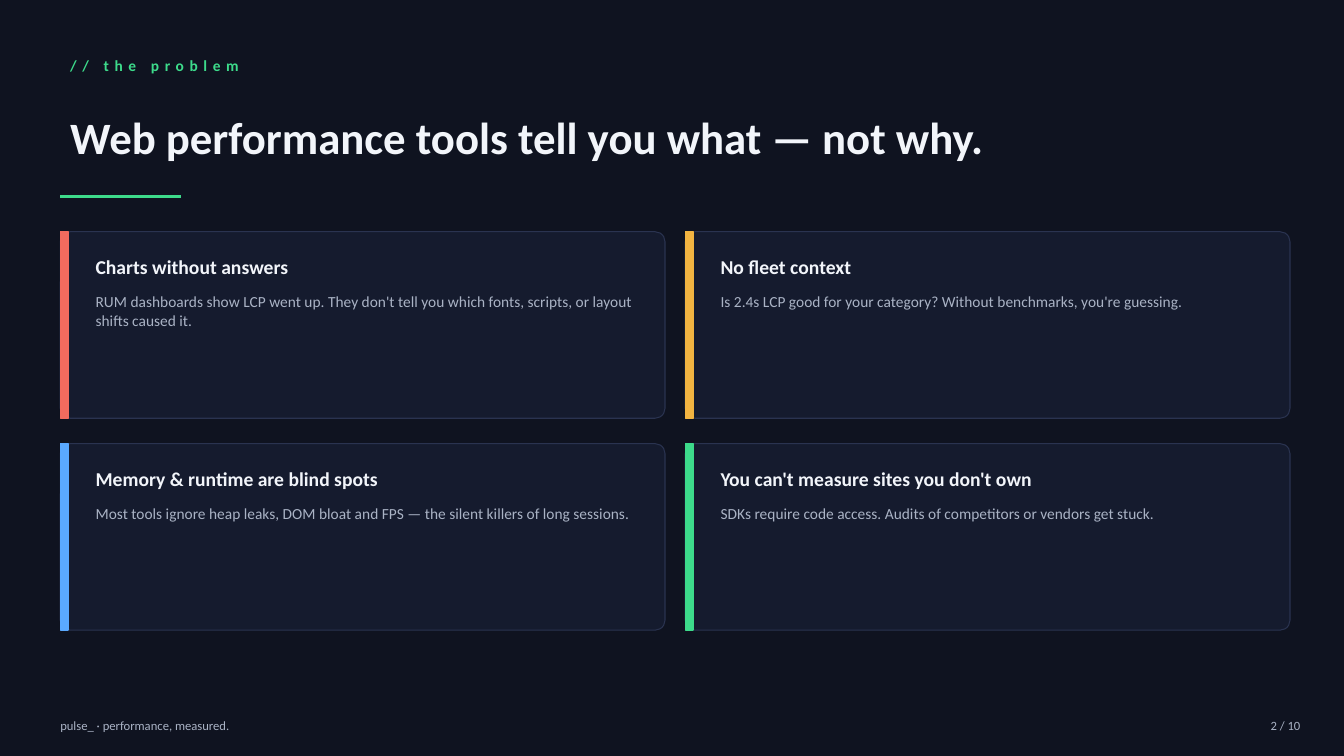
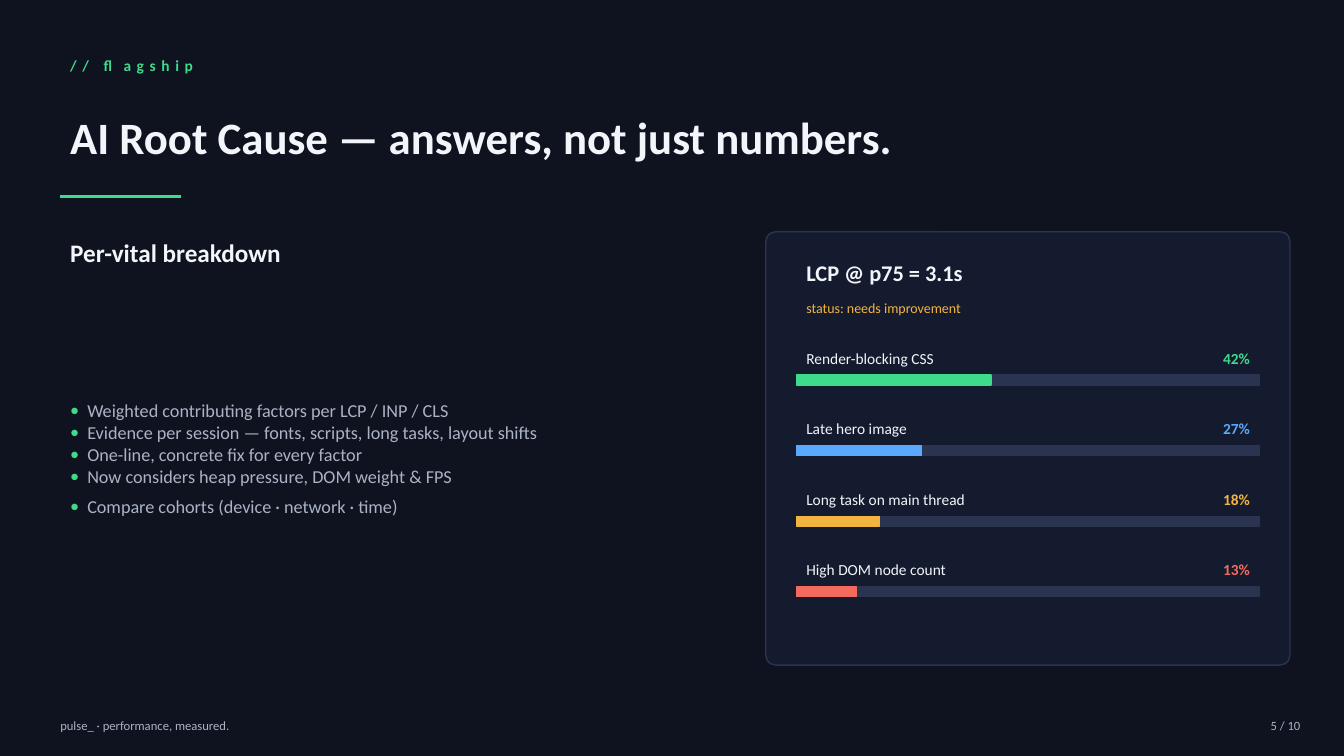
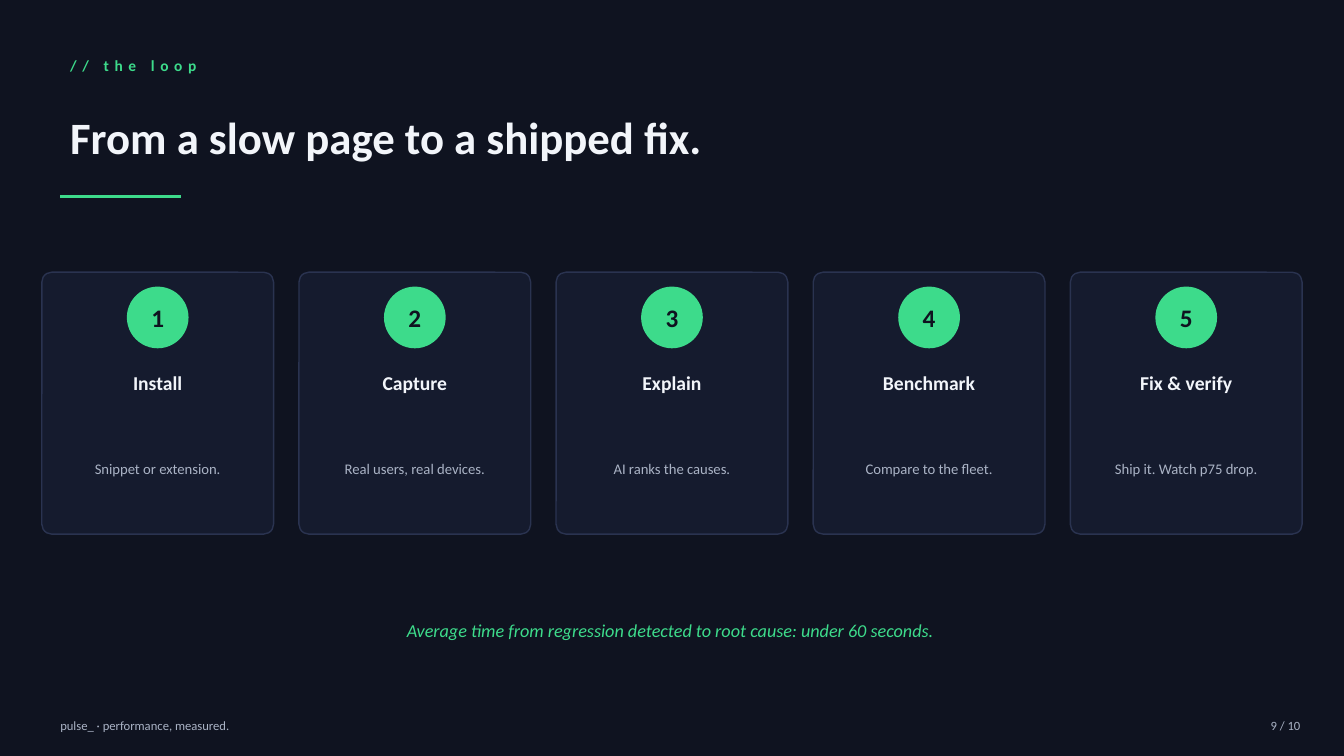
from lxml import etree
from pptx import Presentation
from pptx.dml.color import RGBColor
from pptx.enum.shapes import MSO_CONNECTOR, MSO_SHAPE
from pptx.enum.text import MSO_ANCHOR, PP_ALIGN
from pptx.oxml.ns import qn
from pptx.util import Cm, Pt

# Shared look
FONT = "Calibri"
NIGHT, PANEL, EDGE = "0F1320", "151B2E", "2A3350"
WHITE, GREY = "F2F5FA", "AAB3C5"
GREEN, RED, AMBER, BLUE = "3DDB8B", "F26B5E", "F2B441", "5AA9FF"
SLIDE_W, SLIDE_H = 33.87, 19.05
LEFT = 1.52
CONTENT_TOP = 5.84
RADIUS = 0.25
FOOTER = "pulse_ · performance, measured."
PAGE_COUNT = 10

# Content
PROBLEM = {
    "page": 2,
    "kicker": "// the problem",
    "title": "Web performance tools tell you what — not why.",
    "cards": [
        ("Charts without answers",
         "RUM dashboards show LCP went up. They don't tell you which fonts, "
         "scripts, or layout shifts caused it.", RED),
        ("No fleet context",
         "Is 2.4s LCP good for your category? Without benchmarks, you're guessing.", AMBER),
        ("Memory & runtime are blind spots",
         "Most tools ignore heap leaks, DOM bloat and FPS — the silent killers "
         "of long sessions.", BLUE),
        ("You can't measure sites you don't own",
         "SDKs require code access. Audits of competitors or vendors get stuck.", GREEN),
    ],
}
FLAGSHIP = {
    "page": 5,
    "kicker": "// flagship",
    "title": "AI Root Cause — answers, not just numbers.",
    "subtitle": "Per-vital breakdown",
    "points": [
        "Weighted contributing factors per LCP / INP / CLS",
        "Evidence per session — fonts, scripts, long tasks, layout shifts",
        "One-line, concrete fix for every factor",
        "Now considers heap pressure, DOM weight & FPS",
        "Compare cohorts (device · network · time)",
    ],
    "metric": "LCP @ p75 = 3.1s",
    "status": "status: needs improvement",
    "factors": [
        ("Render-blocking CSS", 42, GREEN),
        ("Late hero image", 27, BLUE),
        ("Long task on main thread", 18, AMBER),
        ("High DOM node count", 13, RED),
    ],
}
LOOP = {
    "page": 9,
    "kicker": "// the loop",
    "title": "From a slow page to a shipped fix.",
    "steps": [
        ("Install", "Snippet or extension."),
        ("Capture", "Real users, real devices."),
        ("Explain", "AI ranks the causes."),
        ("Benchmark", "Compare to the fleet."),
        ("Fix & verify", "Ship it. Watch p75 drop."),
    ],
    "summary": "Average time from regression detected to root cause: under 60 seconds.",
}


def rgb(color):
    return RGBColor.from_string(color)


def style(paragraph, size, color, bold=False, italic=False, align=PP_ALIGN.LEFT):
    paragraph.alignment = align
    font = paragraph.font
    font.name, font.size, font.bold, font.italic = FONT, Pt(size), bold, italic
    font.color.rgb = rgb(color)


def add_text(slide, box, text, size, color, anchor=MSO_ANCHOR.MIDDLE, **look):
    """Write one paragraph in a wrapping text box and return its frame."""
    frame = slide.shapes.add_textbox(*map(Cm, box)).text_frame
    frame.word_wrap = True
    frame.vertical_anchor = anchor
    frame.text = text
    style(frame.paragraphs[0], size, color, **look)
    return frame


def add_block(slide, kind, box, fill, line=None, width=1):
    block = slide.shapes.add_shape(kind, *map(Cm, box))
    block.shadow.inherit = False
    block.fill.solid()
    block.fill.fore_color.rgb = rgb(fill)
    block.line.color.rgb = rgb(line or fill)
    block.line.width = Pt(width)
    return block


def add_panel(slide, box, width=1):
    panel = add_block(slide, MSO_SHAPE.ROUNDED_RECTANGLE, box, PANEL, EDGE, width)
    panel.adjustments[0] = RADIUS / min(box[2:])


def add_bullet(paragraph):
    hang = Cm(0.43)
    props = paragraph._p.get_or_add_pPr()
    props.set("marL", str(hang))
    props.set("indent", str(-hang))
    color = etree.SubElement(props, qn("a:buClr"))
    etree.SubElement(color, qn("a:srgbClr"), val=GREEN)
    etree.SubElement(props, qn("a:buFont"), typeface=FONT)
    etree.SubElement(props, qn("a:buChar"), char="•")


def start_slide(prs, content):
    """Add a slide with the shared kicker, title, rule and footer."""
    slide = prs.slides.add_slide(prs.slide_layouts[6])
    kicker = add_text(slide, (LEFT, 1.27, 20.32, 0.76), content["kicker"], 11, GREEN, bold=True)
    kicker.paragraphs[0].runs[0]._r.get_or_add_rPr().set("spc", "400")
    add_text(slide, (LEFT, 2.16, 30.48, 2.54), content["title"], 32, WHITE, bold=True)
    rule = slide.shapes.add_connector(
        MSO_CONNECTOR.STRAIGHT, Cm(LEFT), Cm(4.95), Cm(LEFT + 3.05), Cm(4.95))
    rule.line.color.rgb = rgb(GREEN)
    rule.line.width = Pt(2)
    etree.SubElement(rule._element.spPr, qn("a:effectLst"))
    add_text(slide, (1.27, 17.91, 15.24, 0.76), FOOTER, 9, GREY)
    add_text(slide, (30.48, 17.91, 2.54, 0.76), f"{content['page']} / {PAGE_COUNT}", 9, GREY,
             align=PP_ALIGN.RIGHT)
    return slide


def build_problem(prs):
    slide = start_slide(prs, PROBLEM)
    card_w, card_h, gap_x, gap_y = 15.24, 4.7, 0.51, 0.64
    for i, (heading, body, accent) in enumerate(PROBLEM["cards"]):
        row, col = divmod(i, 2)
        x = LEFT + col * (card_w + gap_x)
        y = CONTENT_TOP + row * (card_h + gap_y)
        add_panel(slide, (x, y, card_w, card_h), 0.75)
        add_block(slide, MSO_SHAPE.RECTANGLE, (x, y, 0.2, card_h), accent)
        add_text(slide, (x + 0.64, y + 0.38, 14.22, 1.02), heading, 14, WHITE, bold=True)
        add_text(slide, (x + 0.64, y + 1.4, 14.22, 3.05), body, 11, GREY, MSO_ANCHOR.TOP)


def build_flagship(prs):
    slide = start_slide(prs, FLAGSHIP)

    # Bulleted breakdown
    add_text(slide, (LEFT, CONTENT_TOP, 16.51, 1.02), FLAGSHIP["subtitle"], 18, WHITE, bold=True)
    points = add_text(slide, (LEFT, 7.11, 16.51, 8.89), "\n".join(FLAGSHIP["points"]), 13, GREY)
    for paragraph in points.paragraphs:
        add_bullet(paragraph)
        style(paragraph, 13, GREY)
    points.paragraphs[-1].space_before = Pt(6.3)

    # Factor panel
    add_panel(slide, (19.3, CONTENT_TOP, 13.21, 10.92))
    x, w = 20.07, 11.68
    add_text(slide, (x, 6.35, w, 1.02), FLAGSHIP["metric"], 16, WHITE, bold=True)
    add_text(slide, (x, 7.37, w, 0.76), FLAGSHIP["status"], 10, AMBER)
    percent_w = 1.52
    for i, (factor, percent, color) in enumerate(FLAGSHIP["factors"]):
        y = 8.64 + i * 1.78
        add_text(slide, (x, y, 7.87, 0.76), factor, 11, WHITE)
        add_text(slide, (x + w - percent_w, y, percent_w, 0.76), f"{percent}%", 11, color,
                 bold=True, align=PP_ALIGN.RIGHT)
        for bar_w, fill in ((w, EDGE), (w * percent / 100, color)):
            add_block(slide, MSO_SHAPE.RECTANGLE, (x, y + 0.81, bar_w, 0.25), fill)


def build_loop(prs):
    slide = start_slide(prs, LOOP)
    steps = LOOP["steps"]
    card_w, gap, top, badge_w, inset = 5.84, 0.64, 6.86, 1.52, 0.38
    first_x = (SLIDE_W - len(steps) * card_w - (len(steps) - 1) * gap) / 2
    for i, (heading, body) in enumerate(steps):
        x = first_x + i * (card_w + gap)
        add_panel(slide, (x, top, card_w, 6.6))
        badge = add_block(slide, MSO_SHAPE.OVAL,
                          (x + (card_w - badge_w) / 2, top + 0.38, badge_w, badge_w), GREEN)
        number = badge.text_frame
        number.text = str(i + 1)
        number.vertical_anchor = MSO_ANCHOR.MIDDLE
        style(number.paragraphs[0], 18, NIGHT, bold=True, align=PP_ALIGN.CENTER)
        add_text(slide, (x, top + 2.28, card_w, 1.02), heading, 14, WHITE, bold=True,
                 align=PP_ALIGN.CENTER)
        add_text(slide, (x + inset, top + 3.43, card_w - 2 * inset, 3.05), body, 10.5, GREY,
                 align=PP_ALIGN.CENTER)
    add_text(slide, (LEFT, 15.24, 30.73, 1.27), LOOP["summary"], 13, GREEN, italic=True,
             align=PP_ALIGN.CENTER)


def main():
    prs = Presentation()
    prs.slide_width, prs.slide_height = Cm(SLIDE_W), Cm(SLIDE_H)
    backdrop = prs.slide_master.background.fill
    backdrop.solid()
    backdrop.fore_color.rgb = rgb(NIGHT)
    for build in (build_problem, build_flagship, build_loop):
        build(prs)
    prs.save("out.pptx")


if __name__ == "__main__":
    main()
